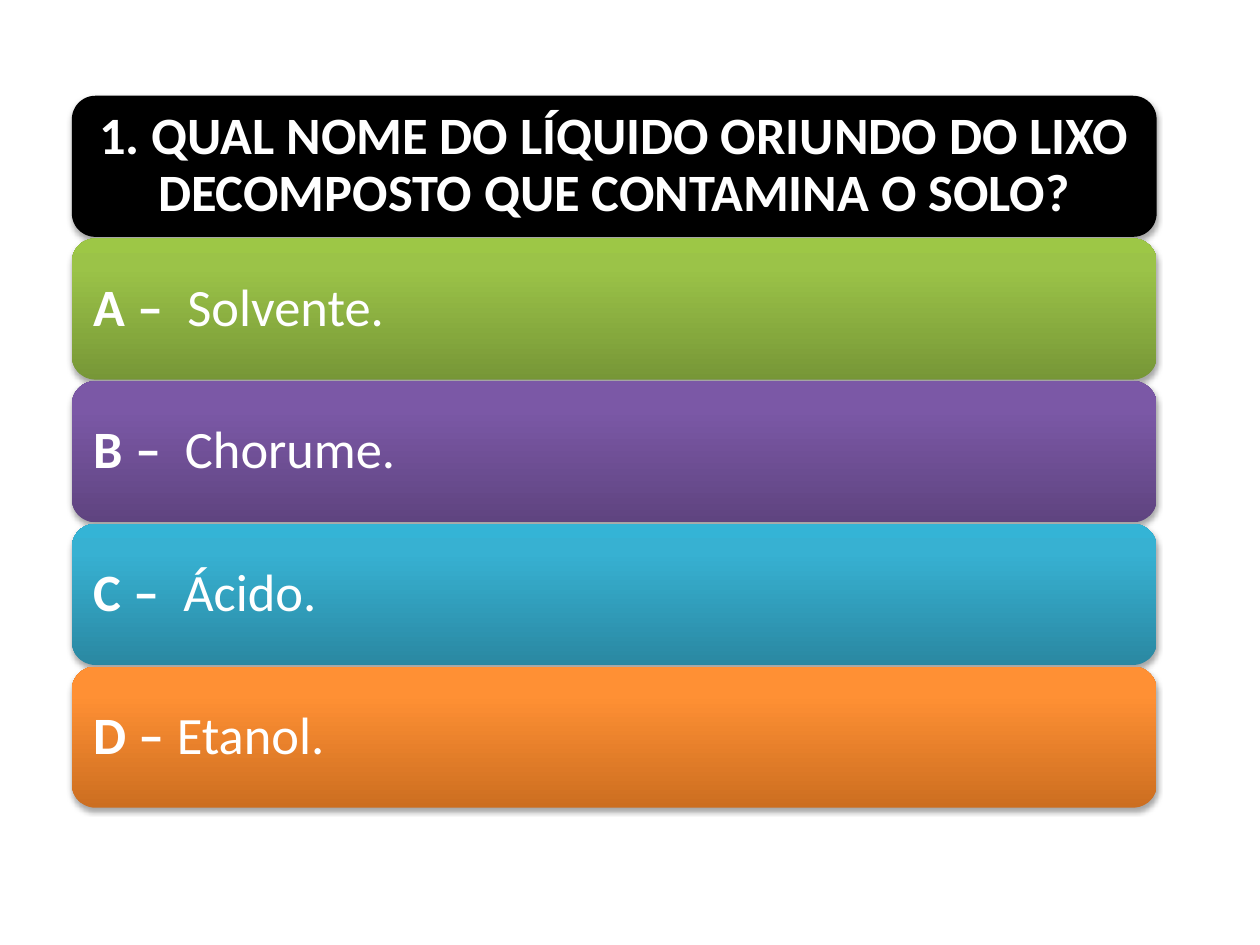
from copy import deepcopy

from lxml import etree
from pptx import Presentation
from pptx import util as u
from pptx.dml.color import RGBColor
from pptx.enum import shapes, text
from pptx.oxml.ns import qn

QUESTION = "1. QUAL NOME DO LÍQUIDO ORIUNDO DO LIXO DECOMPOSTO QUE CONTAMINA O SOLO?"
ANSWERS = [
    ("A – ", " Solvente.", ("779737", "9BC348", "9DC746")),
    ("B – ", " Chorume.", ("5F4480", "7B58A6", "7C57A8")),
    ("C – ", " Ácido.", ("2A88A2", "37B1D2", "34B4D6")),
    ("D – ", "Etanol.", ("CC6E20", "FF9034", "FF9136")),
]
STOPS = (0, 0.8, 1)


def rgb(value):
    return RGBColor.from_string(value)


def fill_gradient(sp, colors):
    sp.fill.gradient()
    sp.fill.gradient_angle = 90
    stops = sp._element.spPr.find(qn("a:gradFill")).find(qn("a:gsLst"))
    stops.append(deepcopy(stops[-1]))
    for stop, position, color in zip(sp.fill.gradient_stops, STOPS, colors):
        stop.color.rgb = rgb(color)
        stop.position = position


def add_shadow(sp):
    sp.shadow.inherit = False
    effects = sp._element.spPr.find(qn("a:effectLst"))
    shadow = etree.SubElement(effects, qn("a:outerShdw"), blurRad=str(u.Pt(3.1)),
                              dist=str(u.Pt(1.8)), dir="5400000", rotWithShape="0")
    color = etree.SubElement(shadow, qn("a:srgbClr"), val="000000")
    etree.SubElement(color, qn("a:alpha"), val="35000")


def add_bar(slide, box, colors, runs, align):
    sp = slide.shapes.add_shape(shapes.MSO_SHAPE.ROUNDED_RECTANGLE,
                                *(u.Inches(v) for v in box))
    if len(colors) == 1:
        sp.fill.solid()
        sp.fill.fore_color.rgb = rgb(colors[0])
    else:
        fill_gradient(sp, colors)
    sp.line.fill.background()
    add_shadow(sp)
    tf = sp.text_frame
    tf.word_wrap = True
    tf.vertical_anchor = text.MSO_ANCHOR.MIDDLE
    tf.margin_left = tf.margin_right = tf.margin_top = tf.margin_bottom = u.Inches(0.12)
    p = tf.paragraphs[0]
    p.alignment = align
    p.line_spacing = 0.9
    for content, bold in runs:
        r = p.add_run()
        r.text = content
        r.font.name = "Calibri"
        r.font.size = u.Pt(30)
        r.font.bold = bold
        r.font.color.rgb = rgb("FFFFFF")


def add_quiz(slide, left, top, width, height):
    bar_height = 1.12
    pitch = (height - bar_height) / len(ANSWERS)
    add_bar(slide, (left, top, width, bar_height), ("000000",),
            [(QUESTION, True)], text.PP_ALIGN.CENTER)
    for i, (letter, answer, colors) in enumerate(ANSWERS, 1):
        add_bar(slide, (left, top + i * pitch, width, bar_height), colors,
                [(letter, True), (answer, False)], text.PP_ALIGN.LEFT)


def main():
    prs = Presentation()
    prs.slide_width = u.Inches(10)
    prs.slide_height = u.Inches(7.5)
    s = prs.slides.add_slide(prs.slide_layouts[6])
    add_quiz(s, 0.57, 0.76, 8.61, 5.65)
    prs.save("out.pptx")


if __name__ == "__main__":
    main()
